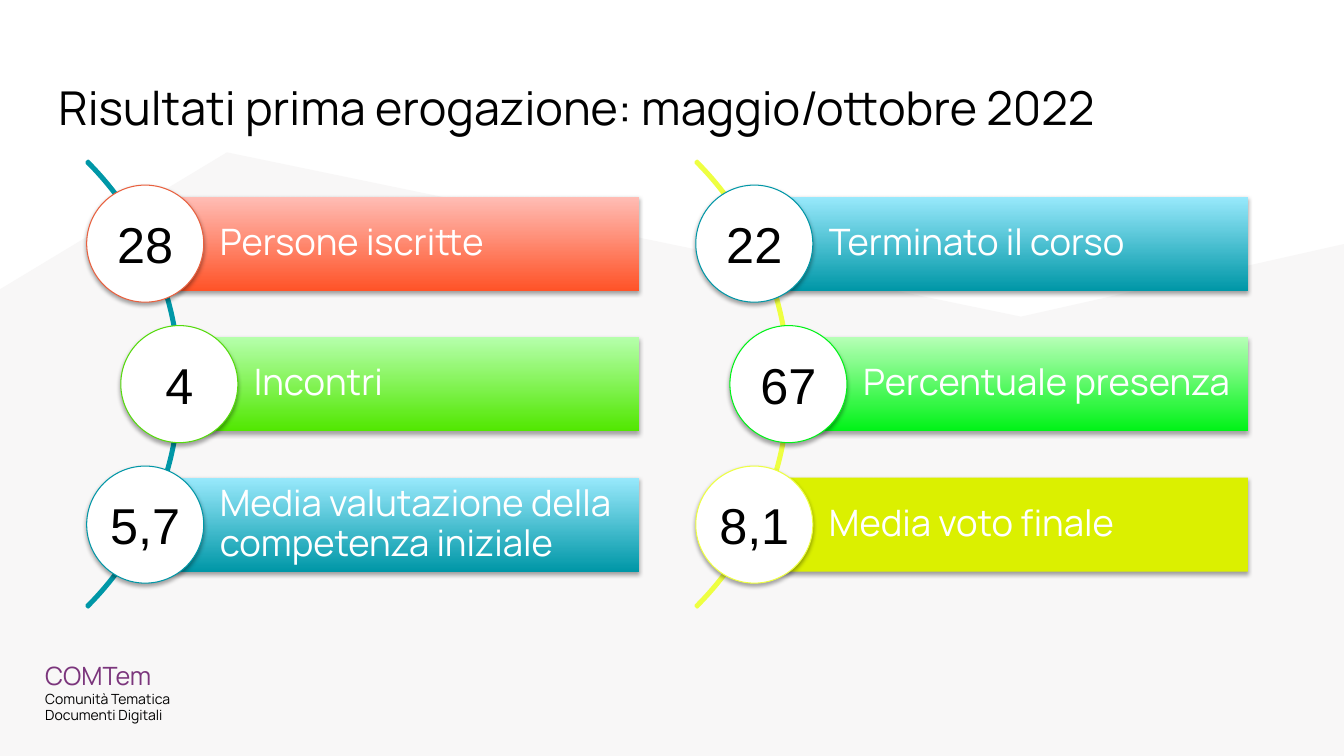
import lxml.etree
import pptx
import pptx.dml.color
import pptx.enum.shapes
import pptx.enum.text
import pptx.oxml.ns
import pptx.util

Cm = pptx.util.Cm
Pt = pptx.util.Pt
MSO = pptx.enum.shapes.MSO_SHAPE
ALIGN = pptx.enum.text.PP_ALIGN
ANCHOR = pptx.enum.text.MSO_ANCHOR
qn = pptx.oxml.ns.qn

COLORS = {
    "white": "FFFFFF", "black": "000000", "backdrop": "F8F7F7", "purple": "7B357C",
    "red": "FF5328", "pink": "FFBDB5", "brick": "E9603E",
    "lime": "51E700", "pale lime": "B6FFAC", "leaf": "55DB0C",
    "teal": "0097A7", "sky": "99E9FC",
    "green": "00F317", "mint": "B7FFB7",
    "yellow": "DBF000", "lemon": "EEFF41",
}
RGB = {k: pptx.dml.color.RGBColor.from_string(v) for k, v in COLORS.items()}


def set_text(tf, text, size, font, color, insets, anchor, align=ALIGN.LEFT):
    tf.text = text
    tf.word_wrap = True
    tf.auto_size = pptx.enum.text.MSO_AUTO_SIZE.NONE
    tf.vertical_anchor = anchor
    tf.margin_left, tf.margin_top, tf.margin_right, tf.margin_bottom = map(Cm, insets)
    for p in tf.paragraphs:
        p.alignment = align
        for r in p.runs:
            r.font.size = Pt(size)
            r.font.name = font
            r.font.color.rgb = RGB[color]


def add_shadow(sp):
    sp.shadow.inherit = False
    effects = sp._element.spPr.find(qn("a:effectLst"))
    shadow = lxml.etree.SubElement(effects, qn("a:outerShdw"), blurRad="40000",
                                   dist="23000", dir="5400000", rotWithShape="0")
    color = lxml.etree.SubElement(shadow, qn("a:srgbClr"), val=COLORS["black"])
    lxml.etree.SubElement(color, qn("a:alpha"), val="35000")


prs = pptx.Presentation()
prs.slide_width, prs.slide_height = Cm(33.87), Cm(19.05)
s = prs.slides.add_slide(prs.slide_layouts[5])

title = s.shapes.title
title.left, title.top, title.width, title.height = Cm(1.14), Cm(1.65), Cm(31.55), Cm(2.11)
set_text(title.text_frame, "Risultati prima erogazione: maggio/ottobre 2022",
         33.3, "Manrope", "black", [0.33] * 4, ANCHOR.TOP)

ridge = [(0, 7.29), (5.72, 3.84), (25.73, 7.98), (33.87, 6.15), (33.87, 19.05)]
fb = s.shapes.build_freeform(Cm(0), Cm(19.05))
fb.add_line_segments([(Cm(x), Cm(y)) for x, y in ridge])
backdrop = fb.convert_to_shape()
backdrop.shadow.inherit = False
backdrop.fill.solid()
backdrop.fill.fore_color.rgb = RGB["backdrop"]
backdrop.line.fill.background()
s.shapes._spTree.insert(2, backdrop._element)

footer = s.shapes.add_textbox(Cm(0.89), Cm(16.38), Cm(8.5), Cm(2.13))
set_text(footer.text_frame, "COMTem\nComunità Tematica\nDocumenti Digitali",
         10, "Manrope", "black", [0.25] * 4, ANCHOR.TOP)
r = footer.text_frame.paragraphs[0].runs[0]
r.font.size = Pt(18)
r.font.color.rgb = RGB["purple"]

columns = [
    ("teal", [
        ("28", "Persone iscritte", "red", "pink", "brick"),
        ("4", "Incontri", "lime", "pale lime", "leaf"),
        ("5,7", "Media valutazione della competenza iniziale", "teal", "sky", "teal"),
    ]),
    ("lemon", [
        ("22", "Terminato il corso", "teal", "sky", "teal"),
        ("67", "Percentuale presenza", "green", "mint", "green"),
        ("8,1", "Media voto finale", "yellow", None, "lemon"),
    ]),
]
COLUMN_PITCH, ROW_PITCH, MIDDLE = 15.35, 3.54, 9.68
ARC, CIRCLE, BAR_HEIGHT = 15.9, 2.95, 2.37

for col, (arc_color, rows) in enumerate(columns):
    dx = col * COLUMN_PITCH
    arc = s.shapes.add_shape(MSO.BLOCK_ARC, Cm(dx - 11.35), Cm(MIDDLE - ARC / 2), Cm(ARC), Cm(ARC))
    arc.adjustments[0] = 189
    arc.adjustments[1] = 27
    arc.adjustments[2] = 0.0035
    arc.shadow.inherit = False
    arc.fill.background()
    arc.line.color.rgb = RGB[arc_color]
    arc.line.width = Pt(2)

    for row, (value, label, dark, light, outline) in enumerate(rows):
        x = dx + (4.52 if row == 1 else 3.66)
        y = MIDDLE + (row - 1) * ROW_PITCH
        bar = s.shapes.add_shape(MSO.RECTANGLE, Cm(x), Cm(y - BAR_HEIGHT / 2),
                                 Cm(dx + 16.1 - x), Cm(BAR_HEIGHT))
        if light:
            bar.fill.gradient()
            bar.fill.gradient_angle = 90
            for stop, color, position in zip(bar.fill.gradient_stops, (dark, light), (0, 1)):
                stop.color.rgb = RGB[color]
                stop.position = position
        else:
            bar.fill.solid()
            bar.fill.fore_color.rgb = RGB[dark]
        bar.line.fill.background()
        add_shadow(bar)
        set_text(bar.text_frame, label, 26, "Manrope", "white",
                 [1.88, 0.18, 0.18, 0.18], ANCHOR.MIDDLE)
        bar.text_frame.paragraphs[0].line_spacing = 0.9

        circle = s.shapes.add_shape(MSO.OVAL, Cm(x - CIRCLE / 2), Cm(y - CIRCLE / 2),
                                    Cm(CIRCLE), Cm(CIRCLE))
        circle.fill.solid()
        circle.fill.fore_color.rgb = RGB["white"]
        circle.line.color.rgb = RGB[outline]
        circle.line.width = Pt(0.75)
        add_shadow(circle)
        set_text(circle.text_frame, value, 36, "Arial", "black",
                 [0] * 4, ANCHOR.MIDDLE, ALIGN.CENTER)
        circle.text_frame.word_wrap = False

prs.save("out.pptx")
